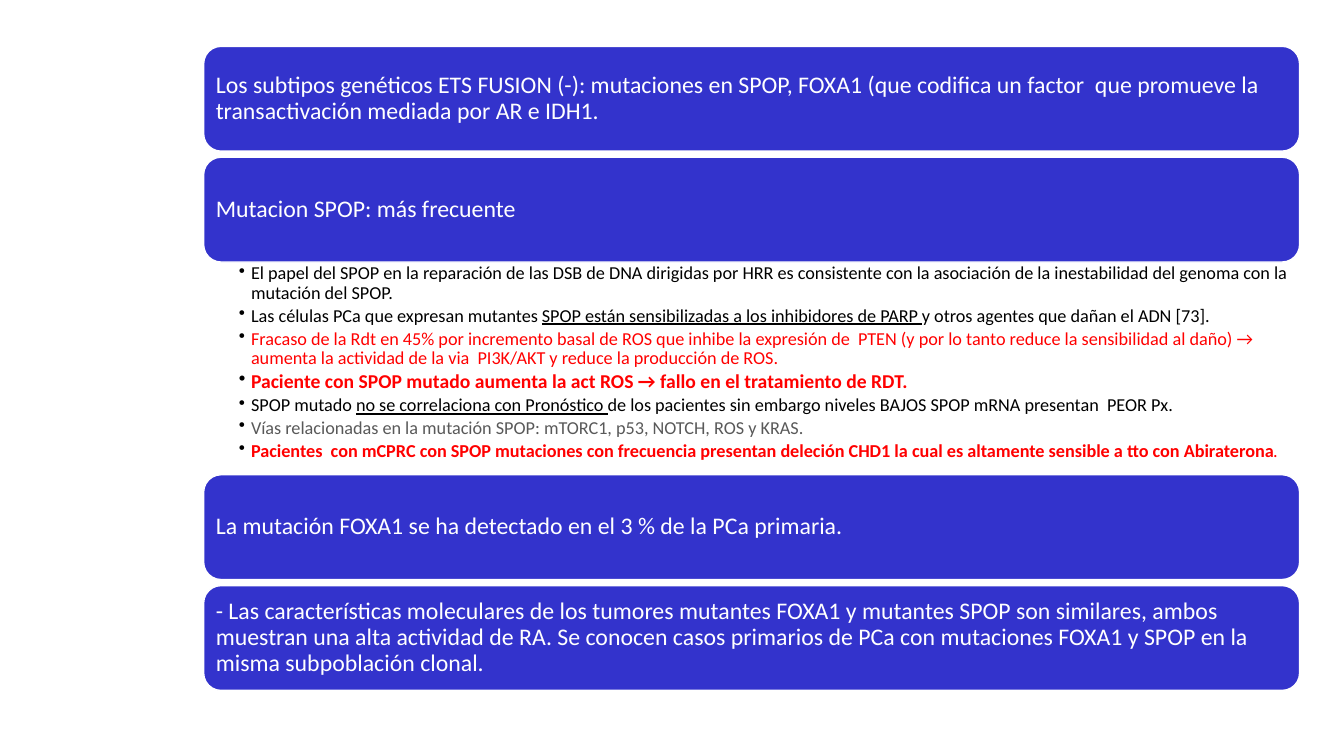
from lxml import etree
from pptx import Presentation
from pptx import util as u
from pptx.dml.color import RGBColor
from pptx.enum import shapes, text
from pptx.oxml.ns import qn

BLUE = RGBColor(0x33, 0x33, 0xCC)
WHITE = RGBColor(0xFF, 0xFF, 0xFF)
BLACK = RGBColor(0, 0, 0)
RED = RGBColor(0xFF, 0, 0)
GRAY = RGBColor(0x59, 0x59, 0x59)

LEFT, TOP, WIDE = 2.02, 0.46, 10.87
HIGH, STEP, LIST = 1.04, 1.1, 2.11
SPLIT = 2

bars = [
    "Los subtipos genéticos ETS FUSION (-): mutaciones en SPOP, FOXA1 (que codifica un factor  que promueve la transactivación mediada por AR e IDH1.",
    "Mutacion SPOP: más frecuente",
    "La mutación FOXA1 se ha detectado en el 3 % de la PCa primaria.",
    "- Las características moleculares de los tumores mutantes FOXA1 y mutantes SPOP son similares, ambos muestran una alta actividad de RA. Se conocen casos primarios de PCa con mutaciones FOXA1 y SPOP en la misma subpoblación clonal.",
]

points = [
    (13, BLACK, [("El papel del SPOP en la reparación de las DSB de DNA dirigidas por HRR es consistente con la asociación de la inestabilidad del genoma con la mutación del SPOP.", "")]),
    (13, BLACK, [("Las células PCa que expresan mutantes ", ""),
                 ("SPOP están sensibilizadas a los inhibidores de PARP ", "u"),
                 ("y otros agentes que dañan el ADN [73].", "")]),
    (13, RED, [("Fracaso de la Rdt en 45% por incremento basal de ROS que inhibe la expresión de  PTEN (y por lo tanto reduce la sensibilidad al daño) → aumenta la actividad de la via  PI3K/AKT y reduce la producción de ROS.", "")]),
    (14, RED, [("Paciente con SPOP mutado aumenta la act ROS → fallo en el tratamiento de RDT.", "b")]),
    (13, BLACK, [("SPOP mutado ", ""),
                 ("no se correlaciona con Pronóstico ", "u"),
                 ("de los pacientes sin embargo niveles BAJOS SPOP mRNA presentan  PEOR Px.", "")]),
    (13, GRAY, [("Vías relacionadas en la mutación SPOP: mTORC1, p53, NOTCH, ROS y KRAS.", "")]),
    (13, RED, [("Pacientes  con mCPRC con SPOP mutaciones con frecuencia presentan deleción CHD1 la cual es altamente sensible a tto con Abiraterona", "b"),
               (".", "")]),
]


def inset(frame, left, top, right, bottom):
    frame.word_wrap = True
    frame.margin_left, frame.margin_top = u.Inches(left), u.Inches(top)
    frame.margin_right, frame.margin_bottom = u.Inches(right), u.Inches(bottom)


def style(run, size, color, mark=""):
    run.font.name = "Calibri"
    run.font.size = u.Pt(size)
    run.font.color.rgb = color
    run.font.bold = mark == "b"
    run.font.underline = mark == "u"


deck = Presentation()
deck.slide_width, deck.slide_height = u.Inches(13.33), u.Inches(7.5)
slide = deck.slides.add_slide(deck.slide_layouts[6])

for row, words in enumerate(bars):
    top = TOP + row * STEP
    if row >= SPLIT:
        top += LIST - (STEP - HIGH)
    bar = slide.shapes.add_shape(
        shapes.MSO_SHAPE.ROUNDED_RECTANGLE,
        u.Inches(LEFT), u.Inches(top), u.Inches(WIDE), u.Inches(HIGH))
    bar.shadow.inherit = False
    bar.fill.solid()
    bar.fill.fore_color.rgb = BLUE
    bar.line.color.rgb = WHITE
    bar.line.width = u.Pt(1)
    frame = bar.text_frame
    inset(frame, 0.07, 0.07, 0.07, 0.07)
    frame.vertical_anchor = text.MSO_ANCHOR.MIDDLE
    frame.text = words
    para = frame.paragraphs[0]
    para.alignment = text.PP_ALIGN.LEFT
    para.line_spacing = 0.9
    style(para.runs[0], 17, WHITE)

box = slide.shapes.add_textbox(
    u.Inches(LEFT), u.Inches(TOP + STEP + HIGH), u.Inches(WIDE), u.Inches(LIST))
frame = box.text_frame
inset(frame, 0.35, 0.02, 0.11, 0.02)
for num, (size, color, parts) in enumerate(points):
    para = frame.add_paragraph() if num else frame.paragraphs[0]
    props = para._p.get_or_add_pPr()
    props.set("marL", str(u.Inches(0.12)))
    props.set("indent", str(-u.Inches(0.12)))
    tint = etree.SubElement(props, qn("a:buClr"))
    etree.SubElement(tint, qn("a:srgbClr"), val=str(BLACK))
    etree.SubElement(props, qn("a:buChar"), char="•")
    para.line_spacing = 0.9
    para.space_after = u.Pt(2.2)
    for words, mark in parts:
        run = para.add_run()
        run.text = words
        style(run, size, color, mark)

deck.save("out.pptx")
